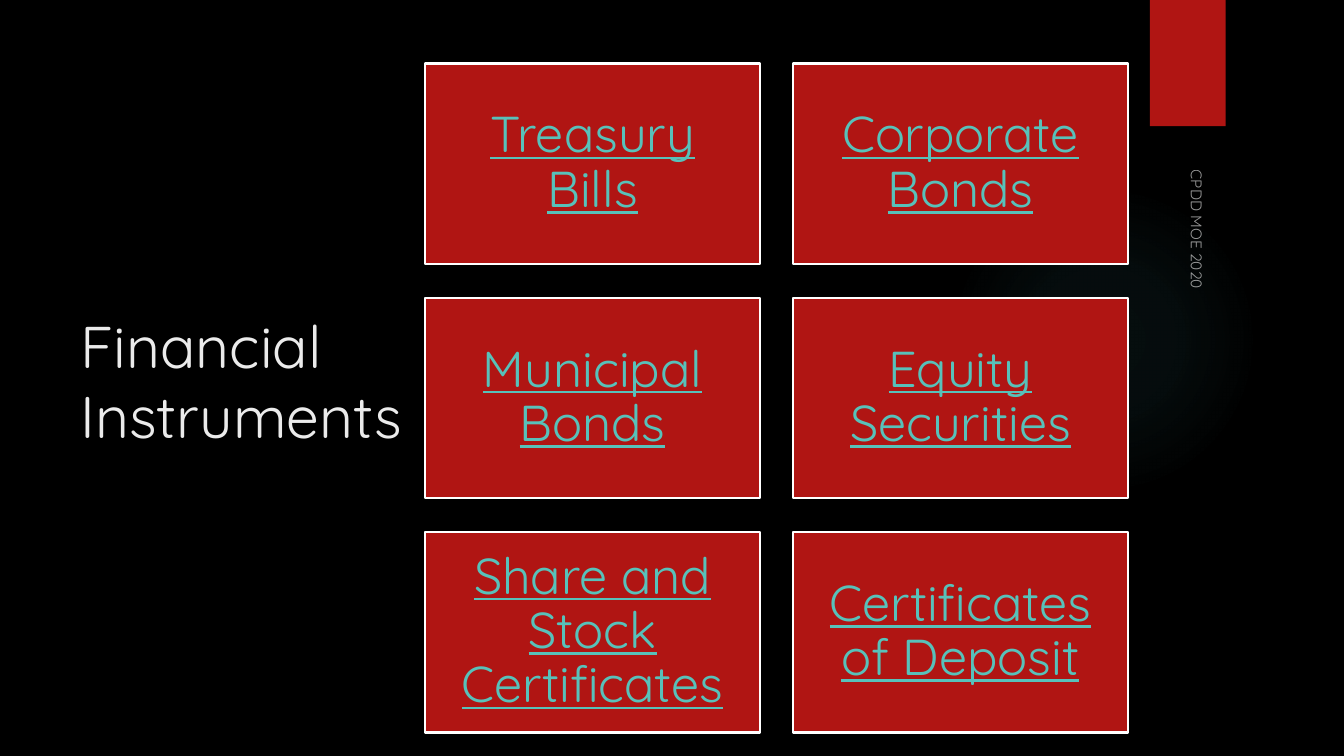
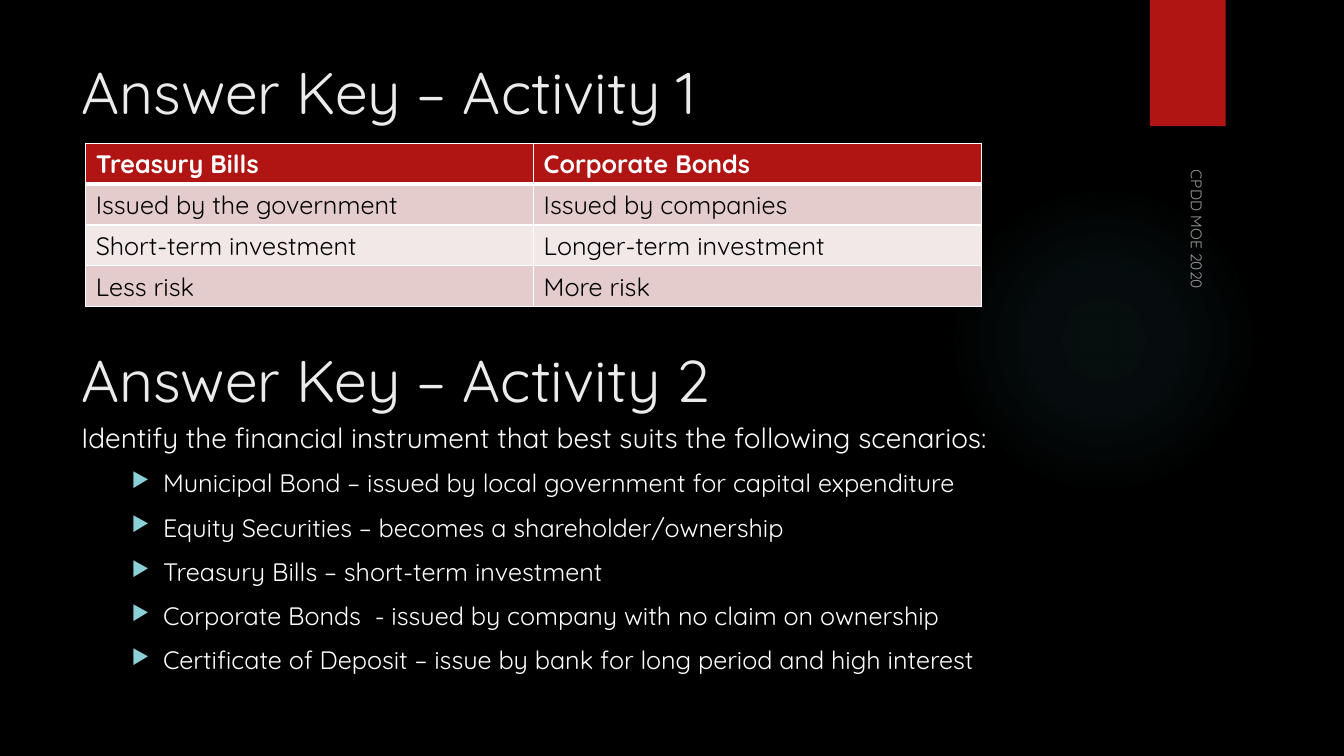
from dataclasses import dataclass

import lxml.etree
import pptx
import pptx.dml.color
import pptx.enum.shapes
import pptx.enum.text
import pptx.oxml
import pptx.oxml.ns
import pptx.util

Cm = pptx.util.Cm
Pt = pptx.util.Pt
RGB = pptx.dml.color.RGBColor.from_string
qn = pptx.oxml.ns.qn
Align = pptx.enum.text.PP_ALIGN
Anchor = pptx.enum.text.MSO_ANCHOR
Preset = pptx.enum.shapes.MSO_SHAPE


@dataclass(frozen=True)
class Theme:
    font: str = "Quicksand"
    background: str = "000000"
    accent: str = "B01513"
    glow: str = "50B9C1"
    title: str = "EBEBEB"
    light: str = "FFFFFF"
    dark: str = "000000"
    link: str = "58C1BA"
    bullet: str = "8AD0D6"
    row_bands: tuple = ("E4CCCC", "F2E8E7")
    title_size: int = 42
    card_size: int = 36
    lead_size: int = 20
    body_size: int = 18
    footer_size: int = 11


@dataclass(frozen=True)
class Box:
    left: float
    top: float
    width: float
    height: float

    def lengths(self):
        return Cm(self.left), Cm(self.top), Cm(self.width), Cm(self.height)


THEME = Theme()
FOOTER = "CPDD MOE 2020"
INSTRUMENTS = [
    "Treasury Bills",
    "Corporate Bonds",
    "Municipal Bonds",
    "Equity Securities",
    "Share and Stock Certificates",
    "Certificates of Deposit",
]
COMPARISON = [
    ("Treasury Bills", "Corporate Bonds"),
    ("Issued by the government", "Issued by companies"),
    ("Short-term investment", "Longer-term investment"),
    ("Less risk", "More risk"),
]
SCENARIO_LEAD = "Identify the financial instrument that best suits the following scenarios:"
SCENARIO_ANSWERS = [
    "Municipal Bond – issued by local government for capital expenditure",
    "Equity Securities – becomes a shareholder/ownership",
    "Treasury Bills – short-term investment",
    "Corporate Bonds  - issued by company with no claim on ownership",
    "Certificate of Deposit – issue by bank for long period and high interest",
]


def add_element(parent, tag, **attributes):
    return lxml.etree.SubElement(parent, qn(tag), attributes)


def style_paragraph(paragraph, size, color, bold=False, underline=None):
    font = paragraph.font
    font.name = THEME.font
    font.size = Pt(size)
    font.bold = bold
    font.underline = underline
    font.color.rgb = RGB(color)


def add_preset(slide, preset, box, fill=None, line=None):
    shape = slide.shapes.add_shape(preset, *box.lengths())
    shape.shadow.inherit = False
    if fill:
        shape.fill.solid()
        shape.fill.fore_color.rgb = RGB(fill)
    if line:
        shape.line.color.rgb = RGB(line)
        shape.line.width = Pt(1.5)
    else:
        shape.line.fill.background()
    return shape


def add_text_box(slide, box):
    text_box = slide.shapes.add_textbox(*box.lengths())
    text_box.text_frame.word_wrap = True
    return text_box


def write_heading(frame, text):
    frame.text = text
    frame.word_wrap = True
    frame.auto_size = pptx.enum.text.MSO_AUTO_SIZE.NONE
    frame.vertical_anchor = Anchor.TOP
    heading = frame.paragraphs[0]
    heading.alignment = Align.LEFT
    style_paragraph(heading, THEME.title_size, THEME.title)


def add_glow(slide, box):
    glow = add_preset(slide, Preset.OVAL, box)
    gradient = lxml.etree.Element(qn("a:gradFill"), rotWithShape="1")
    stops = add_element(gradient, "a:gsLst")
    for position, opacity in ((0, 7), (36, 6), (69, 0), (100, 0)):
        stop = add_element(stops, "a:gs", pos=str(position * 1000))
        color = add_element(stop, "a:srgbClr", val=THEME.glow)
        add_element(color, "a:alpha", val=str(opacity * 1000))
    circle = add_element(gradient, "a:path", path="circle")
    add_element(circle, "a:fillToRect", l="50000", t="50000", r="50000", b="50000")
    glow.element.spPr.find(qn("a:prstGeom")).addnext(gradient)


def add_footer(slide, box):
    footer = add_text_box(slide, box)
    footer.rotation = 90
    footer.text_frame.text = FOOTER
    footer.text_frame.vertical_anchor = Anchor.BOTTOM
    style_paragraph(footer.text_frame.paragraphs[0], THEME.footer_size, THEME.light)
    for color in footer.element.iter(qn("a:srgbClr")):
        add_element(color, "a:alpha", val="60000")


def add_base_slide(deck, title, title_box):
    slide = deck.slides.add_slide(deck.slide_layouts[5])
    add_glow(slide, Box(23.9, 4.65, 7.82, 7.82))
    add_preset(slide, Preset.RECTANGLE, Box(28.98, 0, 1.91, 3.18), THEME.accent)
    heading = slide.shapes.title
    heading.left, heading.top, heading.width, heading.height = title_box.lengths()
    write_heading(heading.text_frame, title)
    add_footer(slide, Box(24.87, 8.97, 10.72, 0.84))
    return slide


def add_card_grid(slide, box, labels, columns=2, gap=0.84):
    rows = -(-len(labels) // columns)
    width = (box.width - gap * (columns - 1)) / columns
    height = (box.height - gap * (rows - 1)) / rows
    for index, label in enumerate(labels):
        row, column = divmod(index, columns)
        place = Box(box.left + column * (width + gap),
                    box.top + row * (height + gap), width, height)
        card = add_preset(slide, Preset.RECTANGLE, place, THEME.accent, THEME.light)
        frame = card.text_frame
        frame.text = label
        frame.word_wrap = True
        frame.vertical_anchor = Anchor.MIDDLE
        frame.margin_left = frame.margin_right = Cm(0.38)
        frame.margin_top = frame.margin_bottom = Cm(0.38)
        paragraph = frame.paragraphs[0]
        paragraph.alignment = Align.CENTER
        paragraph.line_spacing = 0.9
        style_paragraph(paragraph, THEME.card_size, THEME.link, underline=True)


def add_borders(cell, **widths):
    properties = cell._tc.get_or_add_tcPr()
    for side in "LRTB":
        border = add_element(properties, f"a:ln{side}", w=str(Pt(widths.get(side, 1))))
        fill = add_element(border, "a:solidFill")
        add_element(fill, "a:srgbClr", val=THEME.light)


def add_comparison_table(slide, box, rows):
    table = slide.shapes.add_table(len(rows), len(rows[0]), *box.lengths()).table
    for row_index, row in enumerate(rows):
        header = row_index == 0
        band = THEME.accent if header else THEME.row_bands[(row_index - 1) % 2]
        thick_sides = {0: {"B": 3}, 1: {"T": 3}}.get(row_index, {})
        for column_index, text in enumerate(row):
            cell = table.cell(row_index, column_index)
            add_borders(cell, **thick_sides)
            cell.fill.solid()
            cell.fill.fore_color.rgb = RGB(band)
            cell.text = text
            style_paragraph(cell.text_frame.paragraphs[0], THEME.body_size,
                            THEME.light if header else THEME.dark, bold=header)


def add_bullet(paragraph):
    properties = paragraph._p.get_or_add_pPr()
    properties.set("marL", str(Cm(2.06)))
    properties.set("indent", str(Cm(-0.79)))
    color = add_element(properties, "a:buClr")
    add_element(color, "a:srgbClr", val=THEME.bullet)
    add_element(properties, "a:buSzPct", val="80000")
    add_element(properties, "a:buChar", char="▶")


def add_scenarios(slide, box, lead, answers):
    frame = add_text_box(slide, box).text_frame
    frame.text = lead
    style_paragraph(frame.paragraphs[0], THEME.lead_size, THEME.light)
    for answer in answers:
        paragraph = frame.add_paragraph()
        paragraph.text = answer
        paragraph.level = 1
        add_bullet(paragraph)
        paragraph.space_before = Pt(10)
        style_paragraph(paragraph, THEME.body_size, THEME.light)


def build_instruments_slide(deck):
    slide = add_base_slide(deck, "Financial Instruments", Box(1.78, 7.67, 9.63, 5.66))
    add_card_grid(slide, Box(10.72, 1.6, 17.7, 16.86), INSTRUMENTS)


def build_answer_key_slide(deck):
    slide = add_base_slide(deck, "Answer Key – Activity 1", Box(1.8, 1.27, 26.14, 3.89))
    add_comparison_table(slide, Box(2.16, 3.61, 22.58, 4.12), COMPARISON)
    second_heading = add_text_box(slide, Box(1.8, 8.53, 19.41, 1.96))
    write_heading(second_heading.text_frame, "Answer Key – Activity 2")
    add_scenarios(slide, Box(1.8, 10.46, 30, 7.75), SCENARIO_LEAD, SCENARIO_ANSWERS)


def main():
    deck = pptx.Presentation()
    deck.slide_width, deck.slide_height = Cm(33.87), Cm(19.05)
    background = deck.slide_master.background.fill
    background.solid()
    background.fore_color.rgb = RGB(THEME.background)
    build_instruments_slide(deck)
    build_answer_key_slide(deck)
    deck.save("out.pptx")


if __name__ == "__main__":
    main()
